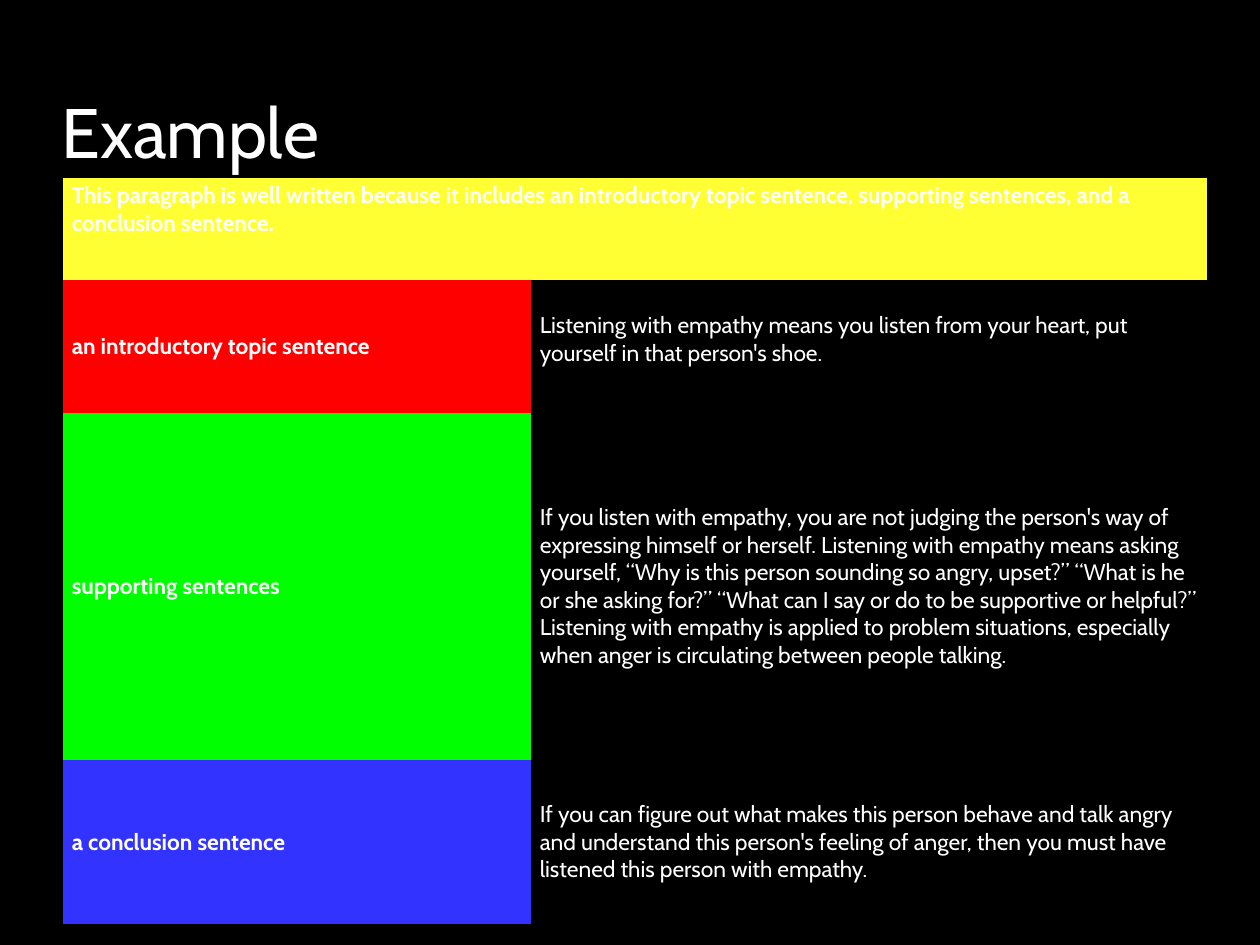
from pptx import Presentation
from pptx.dml.color import RGBColor
from pptx.enum.text import MSO_ANCHOR
from pptx.oxml.ns import qn
from pptx.util import Inches, Pt

BLACK = RGBColor(0x00, 0x00, 0x00)
WHITE = RGBColor(0xFF, 0xFF, 0xFF)
YELLOW = RGBColor(0xFF, 0xFF, 0x33)
RED = RGBColor(0xFF, 0x00, 0x00)
GREEN = RGBColor(0x00, 0xFF, 0x00)
BLUE = RGBColor(0x33, 0x33, 0xFF)

NO_STYLE_NO_GRID = "{2D5ABB26-0587-4C30-8999-92F81FD0307C}"
GRID_COLUMNS = 100
COLUMN_WIDTHS = (37.15, 53.65)
ROW_HEIGHTS = (8.1, 10.5, 27.6, 13)

HEADING = (
    "This paragraph is well written because it includes an introductory topic sentence, "
    "supporting sentences, and a conclusion sentence."
)
# Label, label fill, example text
PARTS = (
    (
        "an introductory topic sentence", RED,
        "Listening with empathy means you listen from your heart, "
        "put yourself in that person's shoe.",
    ),
    (
        "supporting sentences", GREEN,
        "If you listen with empathy, you are not judging the person's way of expressing "
        "himself or herself. Listening with empathy means asking yourself, “Why is this "
        "person sounding so angry, upset?” “What is he or she asking for?” “What can I say "
        "or do to be supportive or helpful?” Listening with empathy is applied to problem "
        "situations, especially when anger is circulating between people talking.",
    ),
    (
        "a conclusion sentence", BLUE,
        "If you can figure out what makes this person behave and talk angry and understand "
        "this person's feeling of anger, then you must have listened this person with empathy.",
    ),
)


class SlideBuilder:
    """Holds the text style and the slide; lengths are in square grid units."""

    font_name = "Cabin"
    title_size = Pt(40)
    body_size = Pt(13)

    def __init__(self, presentation):
        self.unit = presentation.slide_width / GRID_COLUMNS
        self.slide = presentation.slides.add_slide(presentation.slide_layouts[6])
        background = self.slide.background.fill
        background.solid()
        background.fore_color.rgb = BLACK

    def length(self, units):
        return round(units * self.unit)

    def add_text(self, paragraph, text, size, bold=False):
        run = paragraph.add_run()
        run.text = text
        run.font.name = self.font_name
        run.font.size = size
        run.font.bold = bold
        run.font.color.rgb = WHITE

    def title(self, text, *box):
        shape = self.slide.shapes.add_textbox(*map(self.length, box))
        frame = shape.text_frame
        frame.word_wrap = True
        frame.vertical_anchor = MSO_ANCHOR.BOTTOM
        paragraph = frame.paragraphs[0]
        paragraph.space_before = Pt(4)
        self.add_text(paragraph, text, self.title_size)

    def table(self, left, top, column_widths, row_heights):
        box = (left, top, sum(column_widths), sum(row_heights))
        shape = self.slide.shapes.add_table(
            len(row_heights), len(column_widths), *map(self.length, box)
        )
        for style in shape.element.iter(qn("a:tableStyleId")):
            style.text = NO_STYLE_NO_GRID
        table = shape.table
        table.first_row = table.horz_banding = False
        for column, width in zip(table.columns, column_widths):
            column.width = self.length(width)
        for row, height in zip(table.rows, row_heights):
            row.height = self.length(height)
        return table

    def cell(self, cell, text, fill=None, bold=False,
             anchor=MSO_ANCHOR.MIDDLE, margin_top=0.03):
        if fill is None:
            cell.fill.background()
        else:
            cell.fill.solid()
            cell.fill.fore_color.rgb = fill
        cell.margin_left = cell.margin_right = Inches(0.07)
        cell.margin_top, cell.margin_bottom = Inches(margin_top), Inches(0.03)
        cell.vertical_anchor = anchor
        self.add_text(cell.text_frame.paragraphs[0], text, self.body_size, bold)


def main():
    presentation = Presentation()
    presentation.slide_width, presentation.slide_height = Inches(10), Inches(7.5)
    builder = SlideBuilder(presentation)

    table = builder.table(5, 14.15, COLUMN_WIDTHS, ROW_HEIGHTS)
    heading = table.cell(0, 0)
    heading.merge(table.cell(0, 1))
    builder.cell(heading, HEADING, YELLOW, bold=True, anchor=MSO_ANCHOR.TOP)
    for row, (label, color, example) in enumerate(PARTS, start=1):
        builder.cell(table.cell(row, 0), label, color, bold=True)
        # The first example starts one text line below the top of its cell.
        placing = {"anchor": MSO_ANCHOR.TOP, "margin_top": 0.25} if row == 1 else {}
        builder.cell(table.cell(row, 1), example, **placing)

    builder.title("Example", 3.9, 2.5, 84, 11.7)
    presentation.save("out.pptx")


if __name__ == "__main__":
    main()
